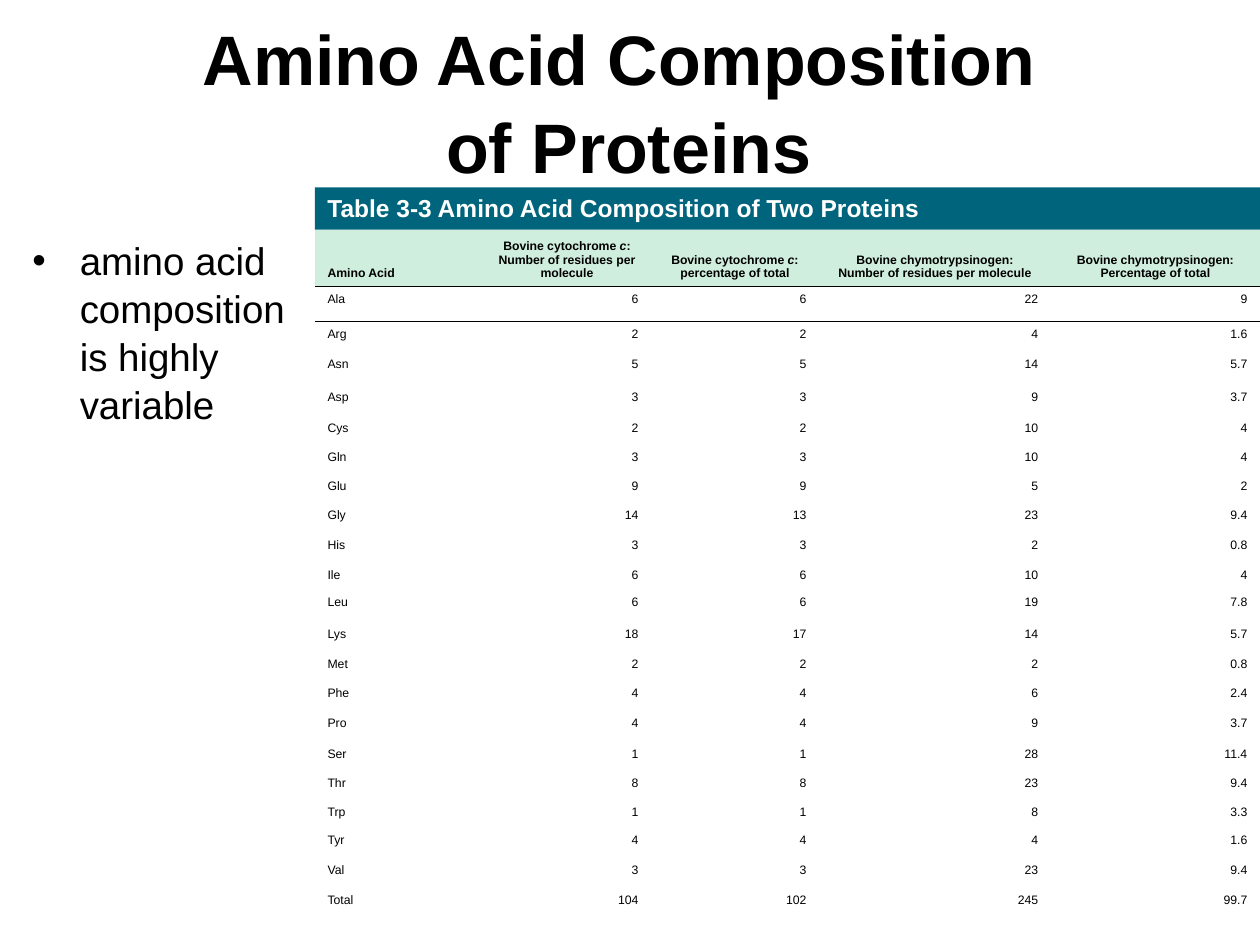
"""Build the slide on the amino acid composition of two proteins."""
from lxml import etree
from pptx import Presentation, util as u
from pptx.dml.color import RGBColor
from pptx.enum import shapes, text
from pptx.oxml import ns

COLORS = {"ink": "000000", "paper": "FFFFFF", "banner": "00657C", "header": "D0EEDD"}
LEFT, CENTER, RIGHT = text.PP_ALIGN.LEFT, text.PP_ALIGN.CENTER, text.PP_ALIGN.RIGHT
NO_STYLE = "{2D5ABB26-0587-4C30-8999-92F81FD0307C}"


def write(frame, words, size, color="ink", bold=False, align=LEFT, spacing=None, bullet=None):
    paragraph = frame.paragraphs[0]
    paragraph.alignment = align
    if spacing:
        paragraph.line_spacing = spacing
    if bullet:
        props = paragraph._p.get_or_add_pPr()
        props.set("marL", str(u.Pt(27)))
        props.set("indent", str(u.Pt(-27)))
        etree.SubElement(props, ns.qn("a:buFont")).set("typeface", "Arial")
        etree.SubElement(props, ns.qn("a:buChar")).set("char", bullet)
    for index, part in enumerate(words.split("*")):
        for number, line in enumerate(part.split("\n")):
            if number:
                paragraph.add_line_break()
            run = paragraph.add_run()
            run.text = line
            run.font.name = "Arial"
            run.font.size = u.Pt(size)
            run.font.bold = bold
            run.font.italic = index % 2 == 1
            run.font.color.rgb = RGBColor.from_string(COLORS[color])


def rule(cell, side, width):
    line = etree.Element(ns.qn(f"a:{side}"), w=str(u.Pt(width)))
    fill = etree.SubElement(line, ns.qn("a:solidFill"))
    etree.SubElement(fill, ns.qn("a:srgbClr")).set("val", COLORS["ink"])
    cell._tc.get_or_add_tcPr().insert(0, line)


deck = Presentation()
deck.slide_width, deck.slide_height = u.Pt(720), u.Pt(540)
slide = deck.slides.add_slide(deck.slide_layouts[6])

title = slide.shapes.add_textbox(u.Pt(-1.5), u.Pt(12), u.Pt(721.5), u.Pt(90)).text_frame
title.word_wrap = True
title.vertical_anchor = text.MSO_ANCHOR.MIDDLE
write(title, "Amino Acid Composition \nof Proteins", 40, bold=True, align=CENTER, spacing=1.04)

remark = slide.shapes.add_textbox(u.Pt(11.5), u.Pt(131), u.Pt(162.7), u.Pt(360)).text_frame
remark.word_wrap = True
write(remark, "amino acid composition is highly variable", 22, spacing=1.04, bullet="•")

banner = slide.shapes.add_shape(
    shapes.MSO_SHAPE.RECTANGLE, u.Pt(180), u.Pt(107), u.Pt(540), u.Pt(24.3))
banner.shadow.inherit = False
banner.fill.solid()
banner.fill.fore_color.rgb = RGBColor.from_string(COLORS["banner"])
banner.line.fill.background()
banner.text_frame.word_wrap = True
banner.text_frame.vertical_anchor = text.MSO_ANCHOR.TOP
write(banner.text_frame, "Table 3-3 Amino Acid Composition of Two Proteins", 14, "paper", bold=True)

headings = [
    "Amino Acid",
    "Bovine cytochrome *c*:\nNumber of residues per molecule",
    "Bovine cytochrome *c*:\npercentage of total",
    "Bovine chymotrypsinogen:\nNumber of residues per molecule",
    "Bovine chymotrypsinogen:\nPercentage of total",
]
residues = """Ala 6 6 22 9
Arg 2 2 4 1.6
Asn 5 5 14 5.7
Asp 3 3 9 3.7
Cys 2 2 10 4
Gln 3 3 10 4
Glu 9 9 5 2
Gly 14 13 23 9.4
His 3 3 2 0.8
Ile 6 6 10 4
Leu 6 6 19 7.8
Lys 18 17 14 5.7
Met 2 2 2 0.8
Phe 4 4 6 2.4
Pro 4 4 9 3.7
Ser 1 1 28 11.4
Thr 8 8 23 9.4
Trp 1 1 8 3.3
Tyr 4 4 4 1.6
Val 3 3 23 9.4
Total 104 102 245 99.7"""
rows = [headings] + [line.split() for line in residues.splitlines()]
widths = [96, 96, 96, 132.5, 119.5]
heights = [29.5, 20, 17.2, 18.8, 17.7, 16.6, 16.6, 16.6, 17, 17, 15.6,
           18.5, 17.1, 16.3, 17.1, 17.7, 16.6, 17, 15.8, 17.1, 17.4, 16.6]

frame = slide.shapes.add_table(
    len(rows), len(widths), u.Pt(180), u.Pt(131.3), u.Pt(sum(widths)), u.Pt(sum(heights)))
composition = frame.table
composition.first_row = composition.horz_banding = False
composition._tbl.tblPr.find(ns.qn("a:tableStyleId")).text = NO_STYLE
for column, width in zip(composition.columns, widths):
    column.width = u.Pt(width)

for r, (values, height) in enumerate(zip(rows, heights)):
    composition.rows[r].height = u.Pt(height)
    for c, value in enumerate(values):
        cell = composition.cell(r, c)
        heading = r == 0
        cell.vertical_anchor = text.MSO_ANCHOR.BOTTOM if heading else text.MSO_ANCHOR.TOP
        cell.fill.solid()
        cell.fill.fore_color.rgb = RGBColor.from_string(COLORS["header" if heading else "paper"])
        align = LEFT if c == 0 else CENTER if heading else RIGHT
        write(cell.text_frame, value, 7, bold=heading, align=align)
        if heading:
            rule(cell, "lnB", 1)
        elif r == 1:
            rule(cell, "lnB", 0.75)
            rule(cell, "lnT", 1)

deck.save("out.pptx")
